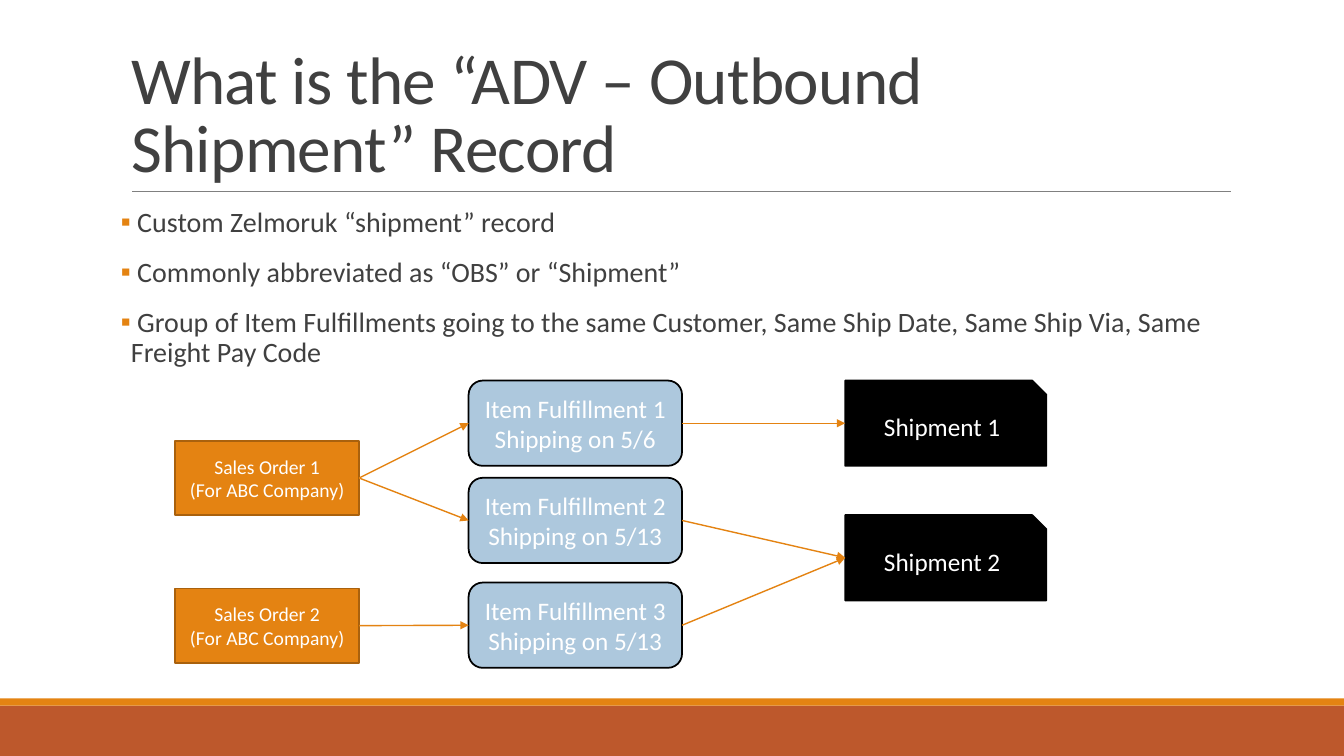
"""Builds the slide that explains the outbound shipment record."""
from dataclasses import dataclass
from typing import Optional

from pptx import Presentation
from pptx.dml.color import RGBColor
from pptx.enum import shapes, text
from pptx.oxml import ns, xmlchemy
from pptx.util import Cm, Pt

COLORS = {"ink": "404040", "orange": "E48312", "brown": "A9610D", "rust": "BD582C",
          "blue": "ADC8DD", "black": "000000", "white": "FFFFFF", "gray": "808080"}
SLIDE_WIDTH, SLIDE_HEIGHT = 33.87, 19.05
TOPICS = [
    " Custom Zelmoruk “shipment” record",
    " Commonly abbreviated as “OBS” or “Shipment”",
    " Group of Item Fulfillments going to the same Customer, Same Ship Date, "
    "Same Ship Via, Same Freight Pay Code",
]


@dataclass(frozen=True)
class Stage:
    """Look shared by all boxes in one column of the flow."""
    kind: int
    left: float
    width: float
    height: float
    fill: str
    line: str
    size: int


@dataclass(frozen=True)
class Step:
    """One box of the flow."""
    stage: Stage
    top: float
    label: str


ORDER = Stage(shapes.MSO_SHAPE.RECTANGLE, 4.42, 4.63, 1.87, "orange", "brown", 14)
FULFILLMENT = Stage(shapes.MSO_SHAPE.ROUNDED_RECTANGLE, 11.81, 5.38, 2.15, "blue", "black", 18)
SHIPMENT = Stage(shapes.MSO_SHAPE.SNIP_1_RECTANGLE, 21.3, 5.07, 2.15, "black", "black", 18)

STEPS = {
    "order 1": Step(ORDER, 11.11, "Sales Order 1\n(For ABC Company)"),
    "order 2": Step(ORDER, 14.83, "Sales Order 2\n(For ABC Company)"),
    "item 1": Step(FULFILLMENT, 9.59, "Item Fulfillment 1\nShipping on 5/6"),
    "item 2": Step(FULFILLMENT, 12.04, "Item Fulfillment 2\nShipping on 5/13"),
    "item 3": Step(FULFILLMENT, 14.68, "Item Fulfillment 3\nShipping on 5/13"),
    "shipment 1": Step(SHIPMENT, 9.59, "Shipment 1"),
    "shipment 2": Step(SHIPMENT, 12.98, "Shipment 2"),
}
FLOWS = [("order 1", "item 1"), ("order 1", "item 2"), ("order 2", "item 3"),
         ("item 1", "shipment 1"), ("item 2", "shipment 2"), ("item 3", "shipment 2")]


def rgb(name: str) -> RGBColor:
    """Return the named colour."""
    return RGBColor.from_string(COLORS[name])


def add_node(parent, tag: str, **attributes: str):
    """Append a DrawingML element to parent."""
    node = xmlchemy.OxmlElement(tag)
    for key, value in attributes.items():
        node.set(key, value)
    parent.append(node)
    return node


def write(frame, content: str, *, size: int, color: str, align=text.PP_ALIGN.LEFT,
          anchor=text.MSO_ANCHOR.TOP, line_spacing: Optional[float] = None,
          before: int = 0, after: int = 0, tracking: Optional[int] = None) -> None:
    """Fill a text frame, one paragraph for each line of content."""
    frame.text = content
    frame.word_wrap = True
    frame.auto_size = text.MSO_AUTO_SIZE.NONE
    frame.vertical_anchor = anchor
    for paragraph in frame.paragraphs:
        paragraph.alignment = align
        paragraph.line_spacing = line_spacing
        paragraph.space_before, paragraph.space_after = Pt(before), Pt(after)
        for run in paragraph.runs:
            run.font.name, run.font.size = "Calibri", Pt(size)
            run.font.color.rgb = rgb(color)
            if tracking is not None:
                run.font._element.set("spc", str(tracking))


def add_bullets(frame) -> None:
    """Give each paragraph a hanging square bullet."""
    for paragraph in frame.paragraphs:
        properties = paragraph._p.get_or_add_pPr()
        properties.set("marL", str(Cm(0.25)))
        properties.set("indent", str(-Cm(0.25)))
        add_node(add_node(properties, "a:buClr"), "a:srgbClr", val=COLORS["orange"])
        add_node(properties, "a:buFont", typeface="Calibri")
        add_node(properties, "a:buChar", char="▪")


def add_block(slide, kind: int, left: float, top: float, width: float, height: float,
              fill: str, line: Optional[str] = None):
    """Add a filled shape, outlined if a line colour is given."""
    block = slide.shapes.add_shape(kind, Cm(left), Cm(top), Cm(width), Cm(height))
    block.shadow.inherit = False
    block.fill.solid()
    block.fill.fore_color.rgb = rgb(fill)
    if line is None:
        block.line.fill.background()
    else:
        block.line.color.rgb = rgb(line)
        block.line.width = Pt(1.25)
    return block


def add_line(slide, start: tuple, end: tuple, color: str, width: float, arrow: bool = False):
    """Add a straight line between two points."""
    line = slide.shapes.add_connector(shapes.MSO_CONNECTOR.STRAIGHT, *start, *end)
    line.line.color.rgb = rgb(color)
    line.line.width = Pt(width)
    if arrow:
        add_node(line._element.spPr.find(ns.qn("a:ln")), "a:tailEnd", type="triangle")
    add_node(line._element.spPr, "a:effectLst")
    return line


def add_step(slide, step: Step):
    """Draw one box of the flow."""
    stage = step.stage
    box = add_block(slide, stage.kind, stage.left, step.top, stage.width, stage.height,
                    stage.fill, stage.line)
    write(box.text_frame, step.label, size=stage.size, color="white",
          align=text.PP_ALIGN.CENTER, anchor=text.MSO_ANCHOR.MIDDLE)
    return box


def add_flow(slide, source, target) -> None:
    """Draw an arrow from the right of source to the left of target."""
    start = (source.left + source.width, source.top + source.height // 2)
    end = (target.left, target.top + target.height // 2)
    arrow = add_line(slide, start, end, "orange", 1, arrow=True)
    arrow.begin_connect(source, 3)
    if target.auto_shape_type != SHIPMENT.kind:
        arrow.end_connect(target, 1)


def main() -> None:
    """Build and save the slide."""
    deck = Presentation()
    deck.slide_width, deck.slide_height = Cm(SLIDE_WIDTH), Cm(SLIDE_HEIGHT)
    slide = deck.slides.add_slide(deck.slide_layouts[5])

    for top, height, color in [(17.78, 1.27, "rust"), (17.6, 0.18, "orange")]:
        add_block(slide, shapes.MSO_SHAPE.RECTANGLE, 0, top, SLIDE_WIDTH, height, color)
    add_line(slide, (Cm(3.33), Cm(4.83)), (Cm(31.01), Cm(4.83)), "gray", 0.5)

    title = slide.shapes.title
    title.left, title.top, title.width, title.height = Cm(3.05), Cm(0.79), Cm(27.7), Cm(4.04)
    write(title.text_frame, "What is the “ADV – Outbound Shipment” Record", size=48,
          color="ink", anchor=text.MSO_ANCHOR.BOTTOM, line_spacing=0.85, tracking=-50)

    topics = slide.shapes.add_textbox(Cm(3.05), Cm(5.13), Cm(27.38), Cm(10.13)).text_frame
    topics.margin_left = topics.margin_right = 0
    write(topics, "\n".join(TOPICS), size=20, color="ink", line_spacing=0.9, before=12, after=2)
    add_bullets(topics)

    boxes = {name: add_step(slide, step) for name, step in STEPS.items()}
    for source, target in FLOWS:
        add_flow(slide, boxes[source], boxes[target])

    deck.save("out.pptx")


if __name__ == "__main__":
    main()
